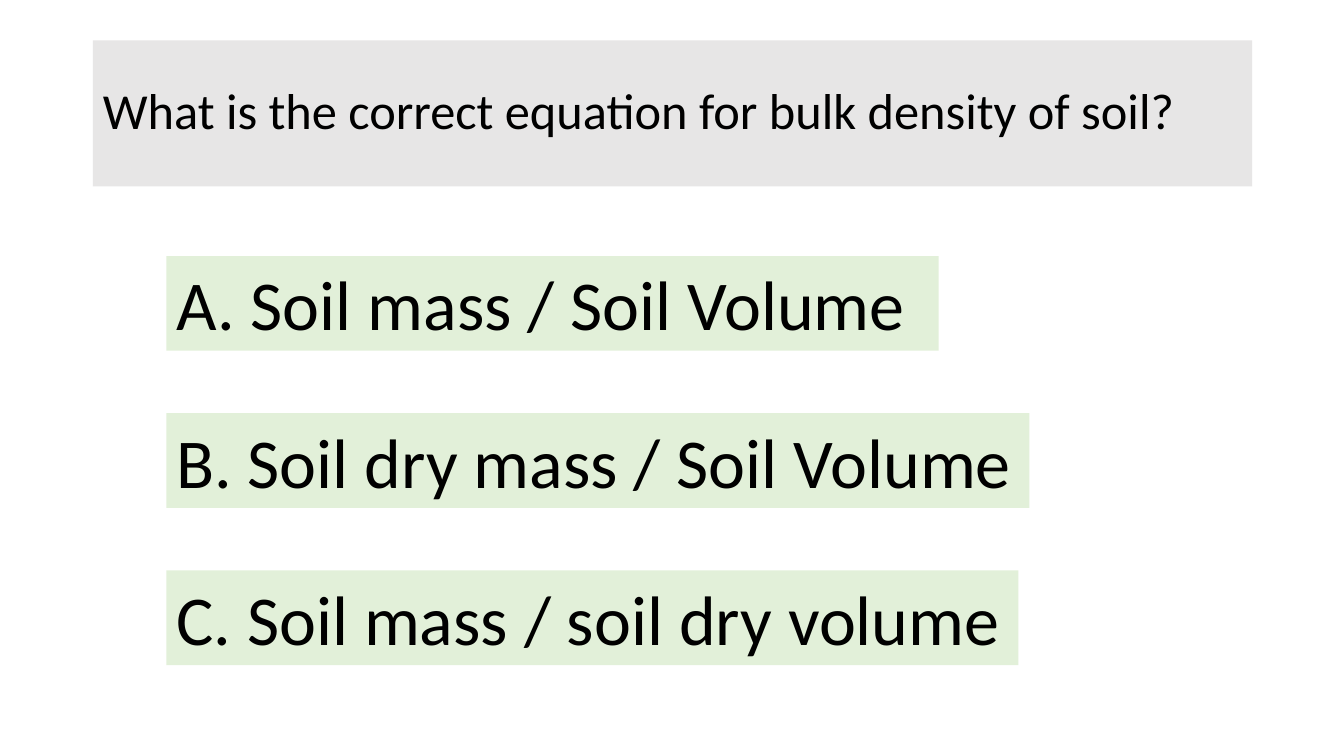
from pptx import Presentation
from pptx.dml.color import RGBColor
from pptx.enum.text import MSO_ANCHOR, MSO_AUTO_SIZE, PP_ALIGN
from pptx.util import Inches, Pt

GREY = RGBColor(0xE7, 0xE6, 0xE6)
GREEN = RGBColor(0xE2, 0xF0, 0xD9)
BLACK = RGBColor(0, 0, 0)
FONT = "Calibri"
WIDTH, HEIGHT = 13.33, 7.5
LEFT, TOP, STEP, TALL = 1.65, 2.54, 1.56, 0.94
CHOICES = [
    ("A. Soil mass / Soil Volume", 7.66),
    ("B. Soil dry mass / Soil Volume", 8.56),
    ("C. Soil mass / soil dry volume", 8.45),
]


def paint(shape, color):
    shape.fill.solid()
    shape.fill.fore_color.rgb = color


def write(frame, text, size):
    frame.word_wrap = True
    par = frame.paragraphs[0]
    par.alignment = PP_ALIGN.LEFT
    run = par.add_run()
    run.text = text
    run.font.name = FONT
    run.font.size = Pt(size)
    run.font.color.rgb = BLACK
    return par


def add_title(slide, text):
    title = slide.shapes.title
    title.left, title.top = Inches(0.92), Inches(0.4)
    title.width, title.height = Inches(11.5), Inches(1.45)
    paint(title, GREY)
    frame = title.text_frame
    frame.auto_size = MSO_AUTO_SIZE.NONE
    frame.vertical_anchor = MSO_ANCHOR.MIDDLE
    write(frame, text, 36).line_spacing = 0.9


def add_choice(slide, row, text, width):
    box = slide.shapes.add_textbox(
        Inches(LEFT), Inches(TOP + row * STEP), Inches(width), Inches(TALL)
    )
    paint(box, GREEN)
    box.text_frame.auto_size = MSO_AUTO_SIZE.SHAPE_TO_FIT_TEXT
    write(box.text_frame, text, 50)


def main():
    deck = Presentation()
    deck.slide_width, deck.slide_height = Inches(WIDTH), Inches(HEIGHT)
    slide = deck.slides.add_slide(deck.slide_layouts[5])
    add_title(slide, "What is the correct equation for bulk density of soil?")
    for row, (text, width) in enumerate(CHOICES):
        add_choice(slide, row, text, width)
    deck.save("out.pptx")


if __name__ == "__main__":
    main()
